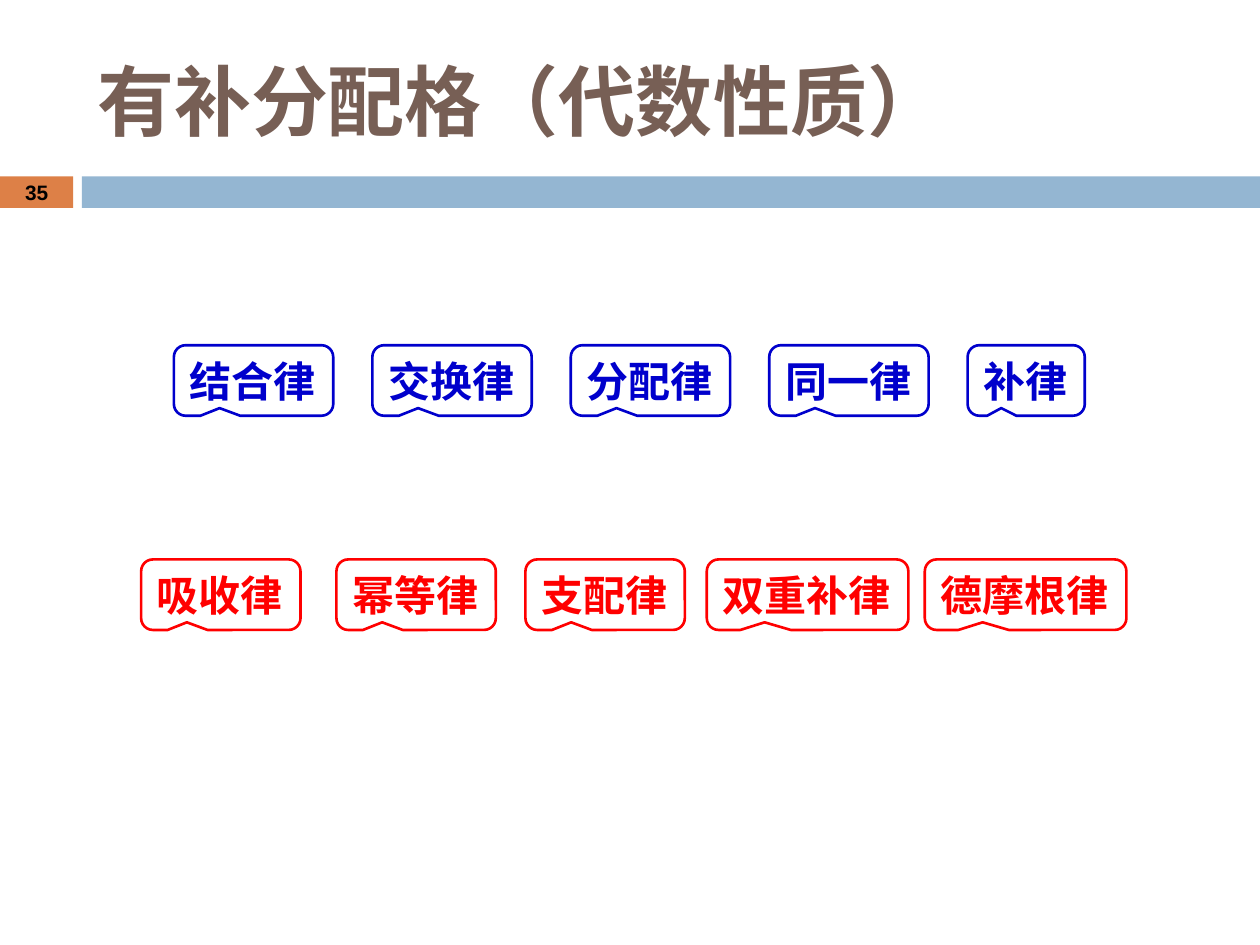
from pptx import Presentation
from pptx.dml.color import RGBColor
from pptx.enum.shapes import MSO_SHAPE as Shape
from pptx.enum.text import MSO_ANCHOR as Anchor, MSO_AUTO_SIZE as AutoSize, PP_ALIGN as Align
from pptx.util import Inches, Pt

COLORS = {
    "title": "775F55",
    "number_bar": "DD8047",
    "title_bar": "94B6D2",
    "axiom": "0000CC",
    "derived": "FF0000",
    "number": "000000",
}
COLUMNS, ROWS = 100, 75
CELL = Inches(0.1)
CALLOUT_ADJUSTMENTS = (-0.213, 0.392, 0.167)


def color(name):
    return RGBColor.from_string(COLORS[name])


def add_text(paragraph, text, font="Arial", size=24, tone="number", align=Align.LEFT):
    paragraph.alignment = align
    run = paragraph.add_run()
    run.text = text
    run.font.name = font
    run.font.size = Pt(size)
    run.font.bold = True
    run.font.color.rgb = color(tone)


class LawSlide:
    def __init__(self, deck):
        self.slide = deck.slides.add_slide(deck.slide_layouts[5])
        self.shapes = self.slide.shapes

    def box(self, *grid):
        return [round(cells * CELL) for cells in grid]

    def title(self, parts, *grid):
        heading = self.shapes.title
        heading.left, heading.top, heading.width, heading.height = self.box(*grid)
        frame = heading.text_frame
        frame.word_wrap = True
        frame.vertical_anchor = Anchor.MIDDLE
        for text, font in parts:
            add_text(frame.paragraphs[0], text, font=font, size=44, tone="title")

    def bar(self, tone, *grid):
        band = self.shapes.add_shape(Shape.RECTANGLE, *self.box(*grid))
        band.shadow.inherit = False
        band.fill.solid()
        band.fill.fore_color.rgb = color(tone)
        band.line.fill.background()

    def number(self, text, *grid):
        frame = self.shapes.add_textbox(*self.box(*grid)).text_frame
        frame.word_wrap = True
        frame.vertical_anchor = Anchor.MIDDLE
        add_text(frame.paragraphs[0], text, size=11.9, align=Align.CENTER)

    def laws(self, laws, tone, top):
        group = self.shapes.add_group_shape()
        for law, left in laws:
            width = 2.6 + 3.35 * len(law)
            callout = group.shapes.add_shape(
                Shape.ROUNDED_RECTANGULAR_CALLOUT, *self.box(left, top, width, 5.6))
            for index, value in enumerate(CALLOUT_ADJUSTMENTS):
                callout.adjustments[index] = value
            callout.shadow.inherit = False
            callout.fill.background()
            callout.line.color.rgb = color(tone)
            callout.line.width = Pt(1.5)
            frame = callout.text_frame
            frame.word_wrap = False
            frame.auto_size = AutoSize.SHAPE_TO_FIT_TEXT
            add_text(frame.paragraphs[0], law, tone=tone)


def main():
    deck = Presentation()
    deck.slide_width, deck.slide_height = COLUMNS * CELL, ROWS * CELL
    page = LawSlide(deck)
    page.bar("number_bar", 0, 14, 5.8, 2.5)
    page.bar("title_bar", 6.5, 14, COLUMNS - 6.5, 2.5)
    axioms = ["结合律", "交换律", "分配律", "同一律", "补律"]
    page.laws([(law, 13.8 + 15.75 * i) for i, law in enumerate(axioms)], "axiom", 27.4)
    derived = [("吸收律", 11.2), ("幂等律", 26.7), ("支配律", 41.7),
               ("双重补律", 56.1), ("德摩根律", 73.4)]
    page.laws(derived, "derived", 44.4)
    page.number("35", 0, 13.9, 5.8, 2.7)
    page.title([("有补分配格（代数", "Times New Roman"), ("性质）", "Calibri")],
               6.7, 2.5, 89.2, 10.8)
    deck.save("out.pptx")


if __name__ == "__main__":
    main()
